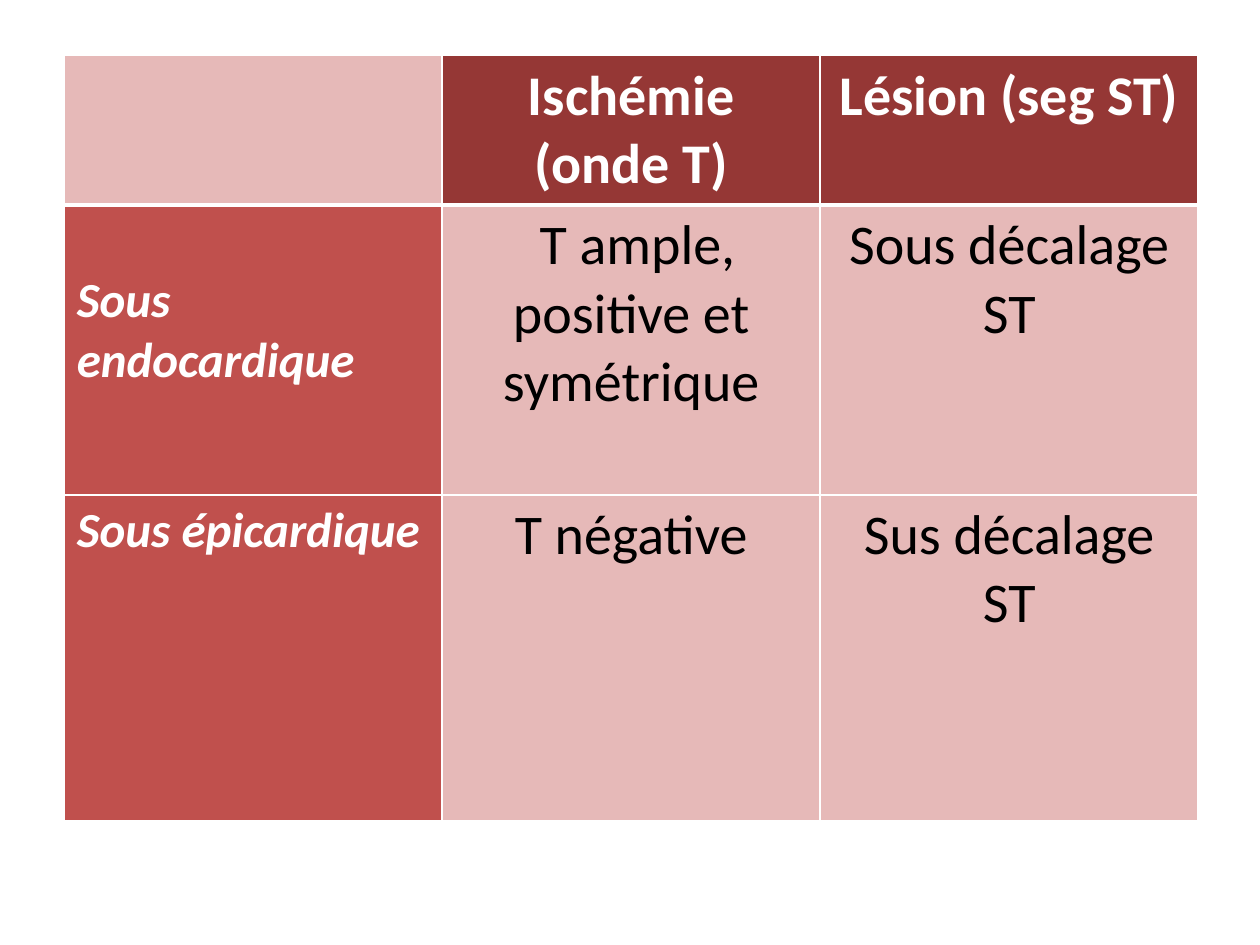
from lxml.etree import SubElement
from pptx import Presentation
from pptx.dml.color import RGBColor
from pptx.enum.text import PP_ALIGN
from pptx.oxml.ns import qn
from pptx.util import Inches, Pt

WHITE = RGBColor(0xFF, 0xFF, 0xFF)
BLACK = RGBColor(0, 0, 0)
DARK_RED = RGBColor(0x95, 0x37, 0x35)
RED = RGBColor(0xC0, 0x50, 0x4D)
PINK = RGBColor(0xE6, 0xB9, 0xB8)

ROWS = [
    ["", "Ischémie (onde T)", "Lésion (seg ST)"],
    ["Sous endocardique", " T ample, positive et symétrique", "Sous décalage ST"],
    ["Sous épicardique", "T négative", "Sus décalage ST"],
]
ROW_HEIGHTS = [1.08, 2.3, 2.59]


def set_borders(cell, bottom_width):
    properties = cell._tc.get_or_add_tcPr()
    widths = {"a:lnL": 1, "a:lnR": 1, "a:lnT": 1, "a:lnB": bottom_width}
    for tag, width in widths.items():
        line = SubElement(properties, qn(tag), w=str(Pt(width)))
        fill = SubElement(line, qn("a:solidFill"))
        SubElement(fill, qn("a:srgbClr"), val=str(WHITE))


def format_cell(cell, text, fill, color, size, align, bold, italic):
    cell.fill.solid()
    cell.fill.fore_color.rgb = fill
    cell.text = text
    para = cell.text_frame.paragraphs[0]
    para.alignment = align
    para.font.name = "Calibri"
    para.font.size = Pt(size)
    para.font.bold = bold
    para.font.italic = italic
    para.font.color.rgb = color


def add_comparison_table(page, left, top, width):
    height = Inches(sum(ROW_HEIGHTS))
    table = page.shapes.add_table(
        len(ROWS), len(ROWS[0]), left, top, width, height).table
    table.horz_banding = False
    for row, row_height in zip(table.rows, ROW_HEIGHTS):
        row.height = Inches(row_height)
    for r, texts in enumerate(ROWS):
        for c, text in enumerate(texts):
            cell = table.cell(r, c)
            set_borders(cell, 3 if r == 0 else 1)
            if r == 0:
                format_cell(cell, text, DARK_RED if text else PINK, WHITE, 32,
                            PP_ALIGN.CENTER, True, False)
            elif c == 0:
                format_cell(cell, text, RED, WHITE, 28, PP_ALIGN.LEFT, True, True)
            else:
                format_cell(cell, text, PINK, BLACK, 32,
                            PP_ALIGN.CENTER, False, False)
    # The first row label sits one line lower than its neighbours
    table.cell(1, 0).margin_top = Inches(0.52)
    table.cell(1, 0).text_frame.paragraphs[0].alignment = PP_ALIGN.JUSTIFY


def main():
    deck = Presentation()
    deck.slide_width, deck.slide_height = Inches(10), Inches(7.5)
    page = deck.slides.add_slide(deck.slide_layouts[6])
    add_comparison_table(page, Inches(0.51), Inches(0.44), Inches(9))
    deck.save("out.pptx")


if __name__ == "__main__":
    main()
